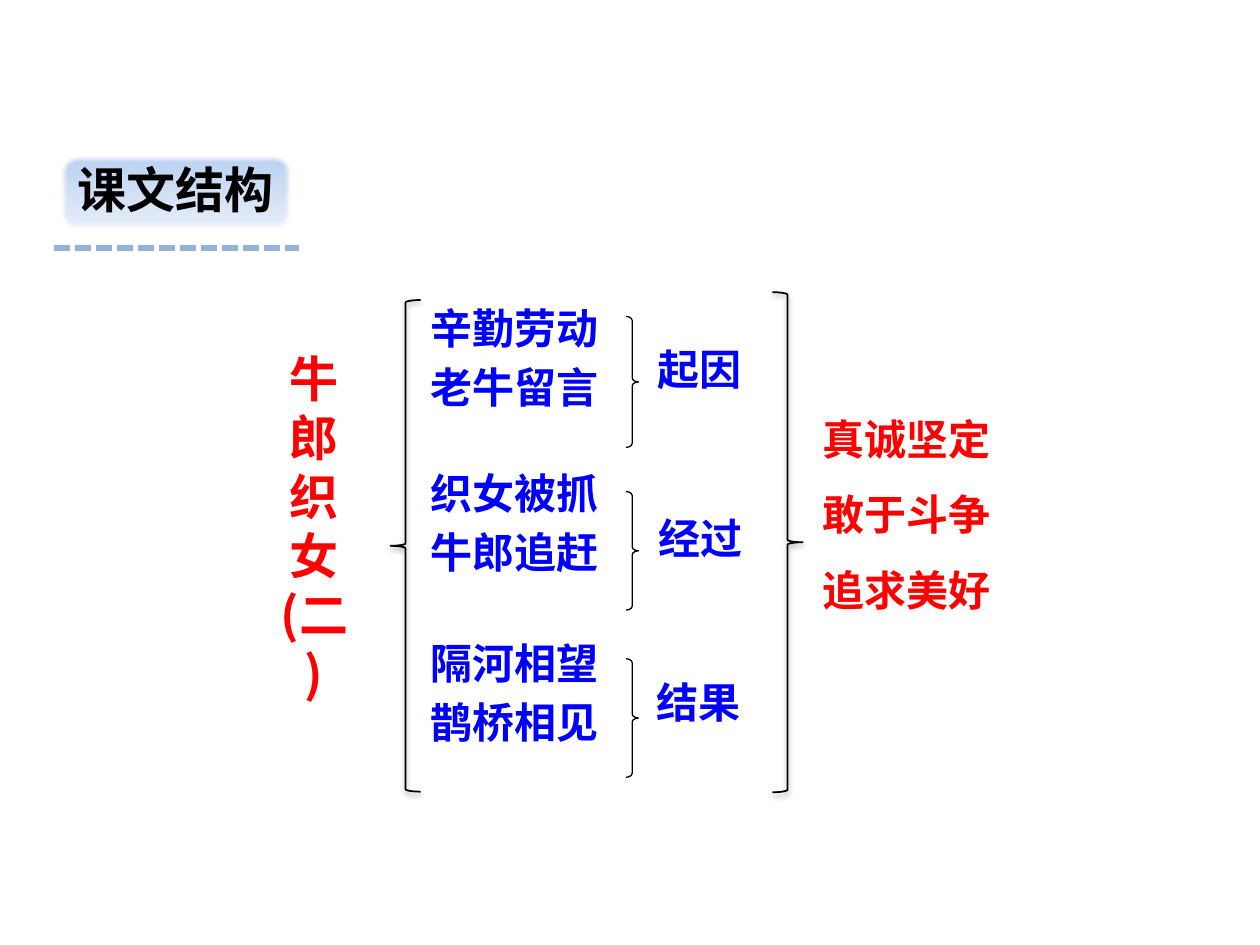
from dataclasses import dataclass

from lxml import etree
from pptx import Presentation
from pptx import util as u
from pptx.dml.color import RGBColor
from pptx.enum import dml, shapes, text
from pptx.oxml import parse_xml

COLORS = {"ink": "000000", "red": "FF0000", "blue": "0000FF",
          "olive": "77933C", "dash": "95B3D7",
          "top": "B7D0F1", "middle": "D2E0F5", "bottom": "E8EFFA"}
CJK, LATIN = "Noto Sans CJK SC", "Arial"
NS = "http://schemas.openxmlformats.org/drawingml/2006/main"


@dataclass
class Frame:
    """Position and size in centimetres."""
    left: float
    top: float
    width: float
    height: float

    def lengths(self) -> list:
        return [u.Cm(n) for n in (self.left, self.top, self.width, self.height)]


@dataclass
class Stage:
    """Two events, the brace that joins them, and the label of the stage."""
    events: str
    label: str
    events_top: float
    label_left: float
    label_top: float
    brace_top: float
    brace_height: float


STAGES = [
    Stage("辛勤劳动\n老牛留言", "起因", 5.97, 13.0, 6.81, 6.38, 2.64),
    Stage("织女被抓\n牛郎追赶", "经过", 9.3, 13.03, 10.21, 9.91, 2.39),
    Stage("隔河相望\n鹊桥相见", "结果", 12.73, 12.98, 13.51, 13.28, 2.39),
]


def rgb(name: str) -> RGBColor:
    return RGBColor.from_string(COLORS[name])


def write(shape, content: str, size: int, color: str, font: str = CJK,
          wrap: bool = False, align=text.PP_ALIGN.LEFT):
    frame = shape.text_frame
    frame.text = content
    frame.word_wrap = wrap
    frame.auto_size = text.MSO_AUTO_SIZE.SHAPE_TO_FIT_TEXT
    frame.vertical_anchor = text.MSO_ANCHOR.TOP
    for para in frame.paragraphs:
        para.alignment = align
        for span in para.runs:
            span.font.name = font
            span.font.size = u.Pt(size)
            span.font.bold = True
            span.font.color.rgb = rgb(color)
    return frame


def add_text(parent, place: Frame, content: str, size: int, color: str, **style):
    return write(parent.add_textbox(*place.lengths()), content, size, color, **style)


def add_brace(parent, kind, place: Frame, weight: float):
    brace = parent.add_shape(kind, *place.lengths())
    brace.shadow.inherit = False
    brace.fill.background()
    brace.line.color.rgb = rgb("ink")
    brace.line.width = u.Pt(weight)
    return brace


def add_outer_brace(parent, place: Frame, rotation: int) -> None:
    brace = add_brace(parent, shapes.MSO_SHAPE.LEFT_BRACE, place, 1)
    brace.rotation = rotation
    effects = brace.element.spPr.find(f"{{{NS}}}effectLst")
    effects.append(parse_xml(
        f'<a:outerShdw xmlns:a="{NS}" blurRad="39370" dist="20320" dir="5400000" '
        f'rotWithShape="0"><a:srgbClr val="{COLORS["ink"]}">'
        '<a:alpha val="38000"/></a:srgbClr></a:outerShdw>'))


def add_stage(page, stage: Stage) -> None:
    group = page.shapes.add_group_shape().shapes
    events = add_text(group, Frame(8.43, stage.events_top, 4.19, 2.51),
                      stage.events, 24, "blue", wrap=True)
    for index, para in enumerate(events.paragraphs):
        properties = para._p.get_or_add_pPr()
        properties.set("marL", str(u.Cm(0.95)))
        properties.set("indent", str(-u.Cm(0.95)))
        if index:
            para.space_before = u.Pt(4.8)
    add_text(group, Frame(stage.label_left, stage.label_top, 2.24, 1.27),
             stage.label, 24, "blue")
    brace = add_brace(group, shapes.MSO_SHAPE.RIGHT_BRACE,
                      Frame(12.62, stage.brace_top, 0.25, stage.brace_height), 0.75)
    brace.adjustments[0] = 0.32


def add_heading(page) -> None:
    group = page.shapes.add_group_shape().shapes
    plate = group.add_shape(shapes.MSO_SHAPE.ROUNDED_RECTANGLE,
                            *Frame(1.24, 3.15, 4.62, 1.47).lengths())
    plate.shadow.inherit = False
    plate.line.color.rgb = rgb("olive")
    plate.line.width = u.Pt(0.75)
    # Three-stop gradient and soft edge
    stops = "".join(f'<a:gs pos="{pos}"><a:srgbClr val="{COLORS[name]}"/></a:gs>'
                    for pos, name in ((0, "top"), (50000, "middle"), (100000, "bottom")))
    properties = plate.element.spPr
    properties.find(f"{{{NS}}}prstGeom").addnext(parse_xml(
        f'<a:gradFill xmlns:a="{NS}" rotWithShape="1"><a:gsLst>{stops}</a:gsLst>'
        '<a:lin ang="5400000" scaled="0"/></a:gradFill>'))
    etree.SubElement(properties.find(f"{{{NS}}}effectLst"),
                     f"{{{NS}}}softEdge", rad="31750")
    heading = write(plate, "课文结构", 28, "ink")
    heading.paragraphs[0].line_spacing = 0.9

    # Dashed underline
    rule = group.add_connector(shapes.MSO_CONNECTOR.STRAIGHT,
                               u.Cm(1.09), u.Cm(5), u.Cm(6.02), u.Cm(5))
    rule.line.color.rgb = rgb("dash")
    rule.line.width = u.Pt(3)
    rule.line.dash_style = dml.MSO_LINE.SQUARE_DOT
    etree.SubElement(rule.element.spPr, f"{{{NS}}}effectLst")


def main() -> None:
    deck = Presentation()
    deck.slide_width, deck.slide_height = u.Cm(25.4), u.Cm(19.05)
    page = deck.slides.add_slide(deck.slide_layouts[6])

    # Story title, one character a line
    add_outer_brace(page.shapes, Frame(7.87, 6.05, 0.61, 9.91), 0)
    title = add_text(page.shapes, Frame(5.08, 6.91, 2.51, 6.25), "牛\n郎\n织\n女\n(二)",
                     28, "red", wrap=True, align=text.PP_ALIGN.CENTER)
    title.margin_left = title.margin_right = u.Cm(0.45)

    # Themes
    themes = add_text(page.shapes, Frame(16.33, 7.7, 3.96, 4.88),
                      "真诚坚定\n敢于斗争\n追求美好", 24, "red", font=LATIN)
    for para in themes.paragraphs:
        para.line_spacing = 1.5
    add_outer_brace(page.shapes, Frame(15.57, 5.89, 0.61, 10.08), 180)

    # Cause, course and outcome
    for stage in STAGES:
        add_stage(page, stage)

    add_heading(page)
    deck.save("out.pptx")


if __name__ == "__main__":
    main()
